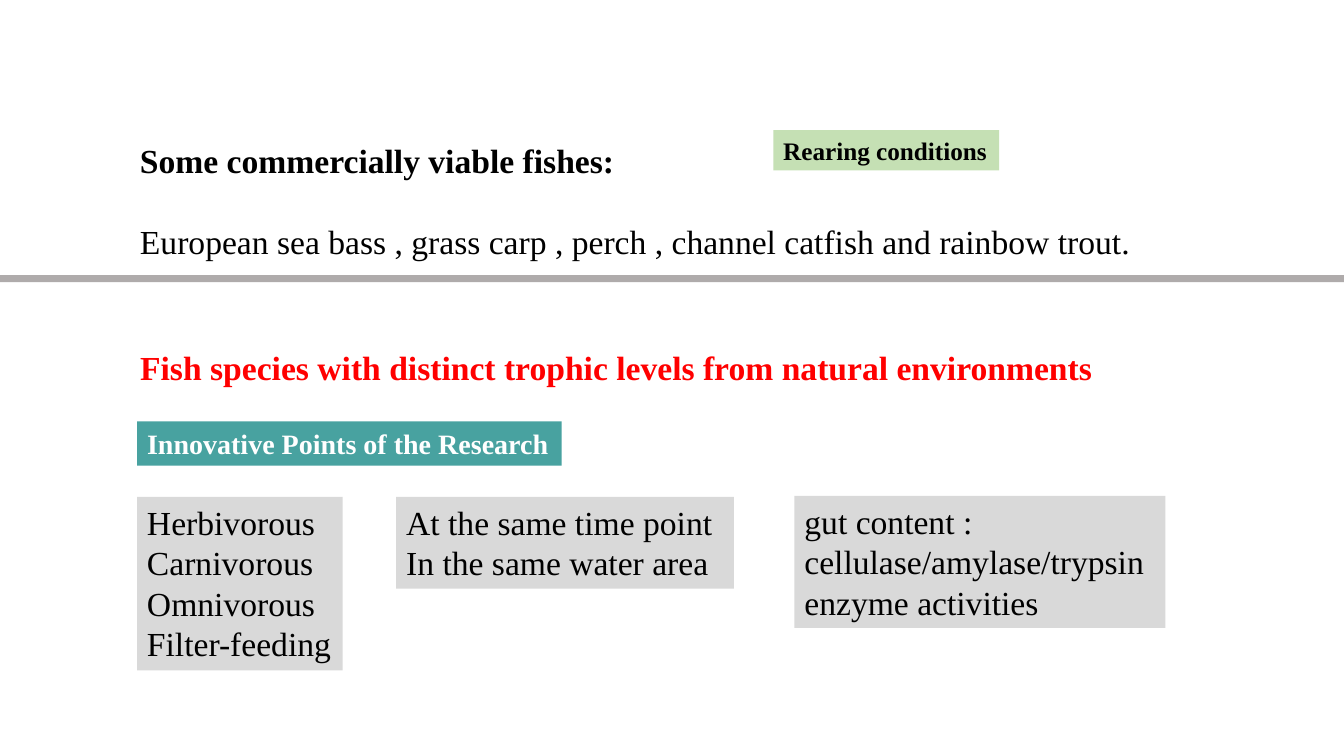
from pptx import Presentation
from pptx.dml.color import RGBColor
from pptx.enum.shapes import MSO_SHAPE
from pptx.enum.text import MSO_ANCHOR, MSO_AUTO_SIZE, PP_ALIGN
from pptx.util import Inches, Pt

FONT = "Times New Roman"
BLACK = RGBColor(0x00, 0x00, 0x00)
WHITE = RGBColor(0xFF, 0xFF, 0xFF)
RED = RGBColor(0xFF, 0x00, 0x00)
GREEN = RGBColor(0xC5, 0xE0, 0xB4)
TEAL = RGBColor(0x48, 0xA2, 0xA0)
LIGHT_GREY = RGBColor(0xD9, 0xD9, 0xD9)
RULE_GREY = RGBColor(0xAF, 0xAB, 0xAB)


def write(p, text, size=24, color=BLACK, bold=False, align=PP_ALIGN.LEFT, spacing=1.0):
    p.alignment = align
    p.line_spacing = spacing
    r = p.add_run()
    r.text = text
    r.font.name = FONT
    r.font.size = Pt(size)
    r.font.bold = bold
    r.font.color.rgb = color


def fill_lines(tf, lines, **fmt):
    for i, line in enumerate(lines):
        p = tf.paragraphs[0] if i == 0 else tf.add_paragraph()
        write(p, line, **fmt)


def add_label(s, x, y, w, h, lines, fill, **fmt):
    sp = s.shapes.add_textbox(Inches(x), Inches(y), Inches(w), Inches(h))
    sp.fill.solid()
    sp.fill.fore_color.rgb = fill
    tf = sp.text_frame
    tf.word_wrap = False
    tf.auto_size = MSO_AUTO_SIZE.SHAPE_TO_FIT_TEXT
    fill_lines(tf, lines, **fmt)


def add_heading(s, x, y, w, h):
    sp = s.shapes.title
    sp.left, sp.top, sp.width, sp.height = (Inches(v) for v in (x, y, w, h))
    tf = sp.text_frame
    tf.word_wrap = True
    tf.auto_size = MSO_AUTO_SIZE.NONE
    tf.vertical_anchor = MSO_ANCHOR.TOP
    write(tf.paragraphs[0],
          "Fish species with distinct trophic levels from natural environments",
          color=RED, bold=True, align=PP_ALIGN.JUSTIFY, spacing=2.0)


def add_species(s, x, y, w, h):
    sp = s.shapes.add_textbox(Inches(x), Inches(y), Inches(w), Inches(h))
    tf = sp.text_frame
    tf.word_wrap = True
    write(tf.paragraphs[0], "Some commercially viable fishes:",
          bold=True, align=PP_ALIGN.JUSTIFY, spacing=2.0)
    write(tf.add_paragraph(),
          "European sea bass , grass carp , perch , channel catfish and rainbow trout.",
          align=PP_ALIGN.JUSTIFY, spacing=2.0)
    add_label(s, x + 6.38, y + 0.35, 2.24, 0.4, ["Rearing conditions"], GREEN,
              size=18, bold=True)


def add_divider(s, x, y, w, h):
    sp = s.shapes.add_shape(MSO_SHAPE.RECTANGLE, Inches(x), Inches(y), Inches(w), Inches(h))
    sp.shadow.inherit = False
    sp.fill.solid()
    sp.fill.fore_color.rgb = RULE_GREY
    sp.line.fill.background()


def add_innovations(s, x, y):
    add_label(s, x, y, 4.21, 0.44, ["Innovative Points of the Research"], TEAL,
              size=20, color=WHITE, bold=True)
    points = [
        (0, 0.75, 2.04, 1.72, ["Herbivorous", "Carnivorous", "Omnivorous", "Filter-feeding"]),
        (2.57, 0.75, 3.35, 0.91, ["At the same time point", "In the same water area"]),
        (6.52, 0.74, 3.68, 1.31, ["gut content :", "cellulase/amylase/trypsin", "enzyme activities"]),
    ]
    for dx, dy, w, h, lines in points:
        add_label(s, x + dx, y + dy, w, h, lines, LIGHT_GREY)


def main():
    prs = Presentation()
    prs.slide_width, prs.slide_height = Inches(13.33), Inches(7.5)
    s = prs.slides.add_slide(prs.slide_layouts[5])
    add_species(s, 1.29, 0.94, 10.53, 1.72)
    add_divider(s, 0, 2.73, 13.33, 0.07)
    add_heading(s, 1.29, 2.99, 10.06, 0.79)
    add_innovations(s, 1.36, 4.18)
    prs.save("out.pptx")


if __name__ == "__main__":
    main()
